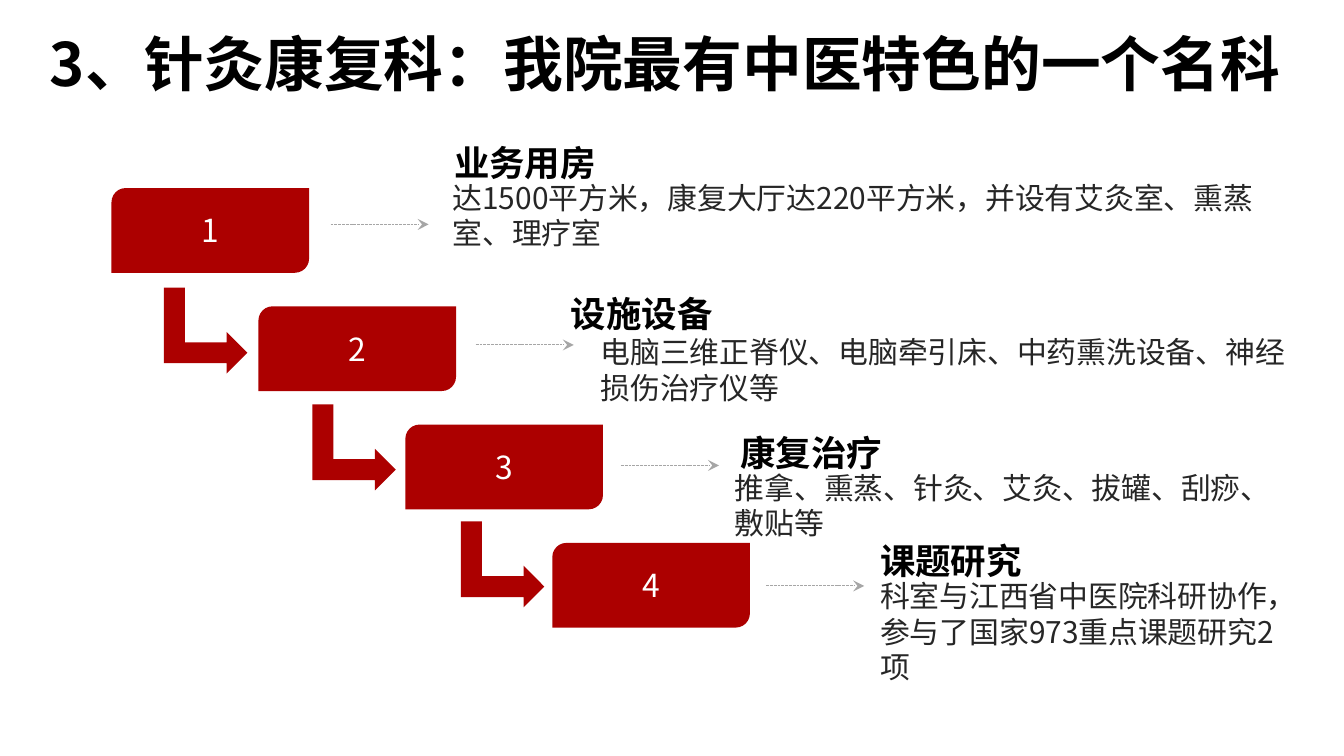
"""Build the acupuncture and rehabilitation department slide: a four-step staircase."""
from dataclasses import dataclass

from lxml import etree
from pptx import Presentation
from pptx import util as u
from pptx.dml.color import RGBColor
from pptx.enum import dml, shapes, text
from pptx.oxml.ns import qn

TITLE = " 3、针灸康复科：我院最有中医特色的一个名科"
STEPS = [
    {"heading": "业务用房", "heading_at": (2.94, 1.02, 1.93, 0.38),
     "detail": "达1500平方米，康复大厅达220平方米，并设有艾灸室、熏蒸室、理疗室",
     "detail_at": (3.27, 1.43, 6.17, 0.34)},
    {"heading": "设施设备", "heading_at": (4.11, 2.14, 1.33, 0.38),
     "detail": "电脑三维正脊仪、电脑牵引床、中药熏洗设备、神经损伤治疗仪等",
     "detail_at": (4.37, 2.58, 5.49, 0.34)},
    {"heading": "康复治疗", "heading_at": (5.37, 3.18, 1.33, 0.38),
     "detail": "推拿、熏蒸、针灸、艾灸、拔罐、刮痧、敷贴等",
     "detail_at": (5.37, 3.64, 4.3, 0.24)},
    {"heading": "课题研究", "heading_at": (6.45, 3.98, 1.33, 0.38),
     "detail": "科室与江西省中医院科研协作，参与了国家973重点课题研究2项",
     "detail_at": (6.45, 4.53, 3.31, 0.34)},
]
LAST = len(STEPS) - 1
BLOCK = {"first": (0.83, 1.4), "last": (4.11, 4.04), "count": LAST, "size": (1.47, 0.63)}
TURN = {"first": (1.21, 2.15), "last": (3.42, 3.89), "count": LAST - 1, "size": (0.64, 0.62)}
POINTER = {"first": (2.46, 1.67), "last": (5.7, 4.36), "count": LAST, "size": (0.73, 0)}


@dataclass(frozen=True)
class Theme:
    font: str = "Noto Sans CJK SC"
    red: str = "AC0000"
    black: str = "000000"
    dark: str = "262626"
    grey: str = "A6A6A6"
    white: str = "FFFFFF"
    title: int = 32
    heading: int = 19
    number: int = 17
    detail: int = 16
    leading: float = 1.19


THEME = Theme()


def inches(values):
    return [u.Inches(value) for value in values]


def stair(grid, index):
    share = index / grid["count"]
    corner = [a + share * (b - a) for a, b in zip(grid["first"], grid["last"])]
    return inches((*corner, *grid["size"]))


def write(frame, words, size, color, bold=False, align=text.PP_ALIGN.LEFT,
          anchor=text.MSO_ANCHOR.MIDDLE):
    frame.text = words
    frame.word_wrap = True
    frame.auto_size = text.MSO_AUTO_SIZE.NONE
    frame.vertical_anchor = anchor
    paragraph = frame.paragraphs[0]
    paragraph.alignment = align
    paragraph.line_spacing = u.Pt(round(size * THEME.leading, 1))
    paragraph.space_before = u.Pt(0)
    for run in paragraph.runs:
        run.font.name, run.font.size, run.font.bold = THEME.font, u.Pt(size), bold
        run.font.color.rgb = RGBColor.from_string(color)
        east_asian = etree.SubElement(run.font._element, qn("a:ea"))
        east_asian.set("typeface", THEME.font)


def add_red_shape(slide, kind, box):
    shape = slide.shapes.add_shape(kind, *box)
    shape.shadow.inherit = False
    shape.fill.solid()
    shape.fill.fore_color.rgb = RGBColor.from_string(THEME.red)
    shape.line.fill.background()
    return shape


def add_pointer(slide, index):
    x, y, width, height = stair(POINTER, index)
    pointer = slide.shapes.add_connector(
        shapes.MSO_CONNECTOR.STRAIGHT, x, y, x + width, y + height)
    pointer.line.color.rgb = RGBColor.from_string(THEME.grey)
    pointer.line.width = u.Pt(0.5)
    pointer.line.dash_style = dml.MSO_LINE.SQUARE_DOT
    properties = pointer._element.spPr
    head = etree.SubElement(properties.find(qn("a:ln")), qn("a:tailEnd"))
    head.set("type", "stealth")
    etree.SubElement(properties, qn("a:effectLst"))


def add_step(slide, index, step):
    block = add_red_shape(slide, shapes.MSO_SHAPE.ROUND_2_DIAG_RECTANGLE, stair(BLOCK, index))
    write(block.text_frame, str(index + 1), THEME.number, THEME.white,
          align=text.PP_ALIGN.CENTER)
    add_pointer(slide, index)
    heading = slide.shapes.add_textbox(*inches(step["heading_at"]))
    write(heading.text_frame, step["heading"], THEME.heading, THEME.black, bold=True,
          align=text.PP_ALIGN.CENTER if index < LAST else text.PP_ALIGN.LEFT)
    detail = slide.shapes.add_textbox(*inches(step["detail_at"]))
    write(detail.text_frame, step["detail"], THEME.detail, THEME.dark)
    if index < LAST:
        turn = add_red_shape(slide, shapes.MSO_SHAPE.BENT_UP_ARROW, stair(TURN, index))
        turn.rotation = 90


def main():
    deck = Presentation()
    deck.slide_width = u.Inches(10)
    deck.slide_height = deck.slide_width * 9 // 16
    slide = deck.slides.add_slide(deck.slide_layouts[5])
    title = slide.shapes.title
    title.left, title.top, title.width, title.height = inches((0.17, 0.15, 9.53, 0.64))
    write(title.text_frame, TITLE, THEME.title, THEME.black, bold=True,
          anchor=text.MSO_ANCHOR.TOP)
    for index, step in enumerate(STEPS):
        add_step(slide, index, step)
    deck.save("out.pptx")


if __name__ == "__main__":
    main()
